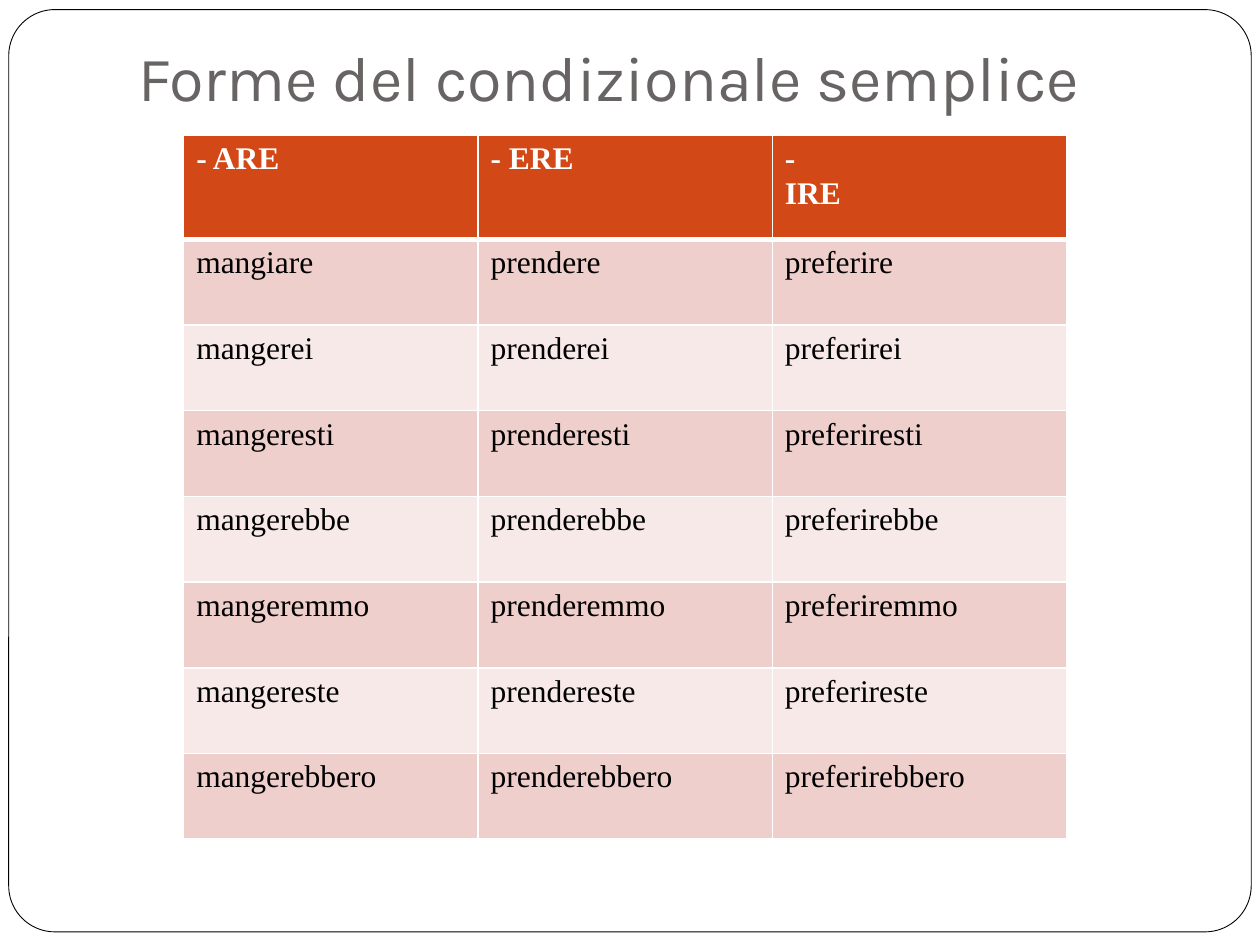
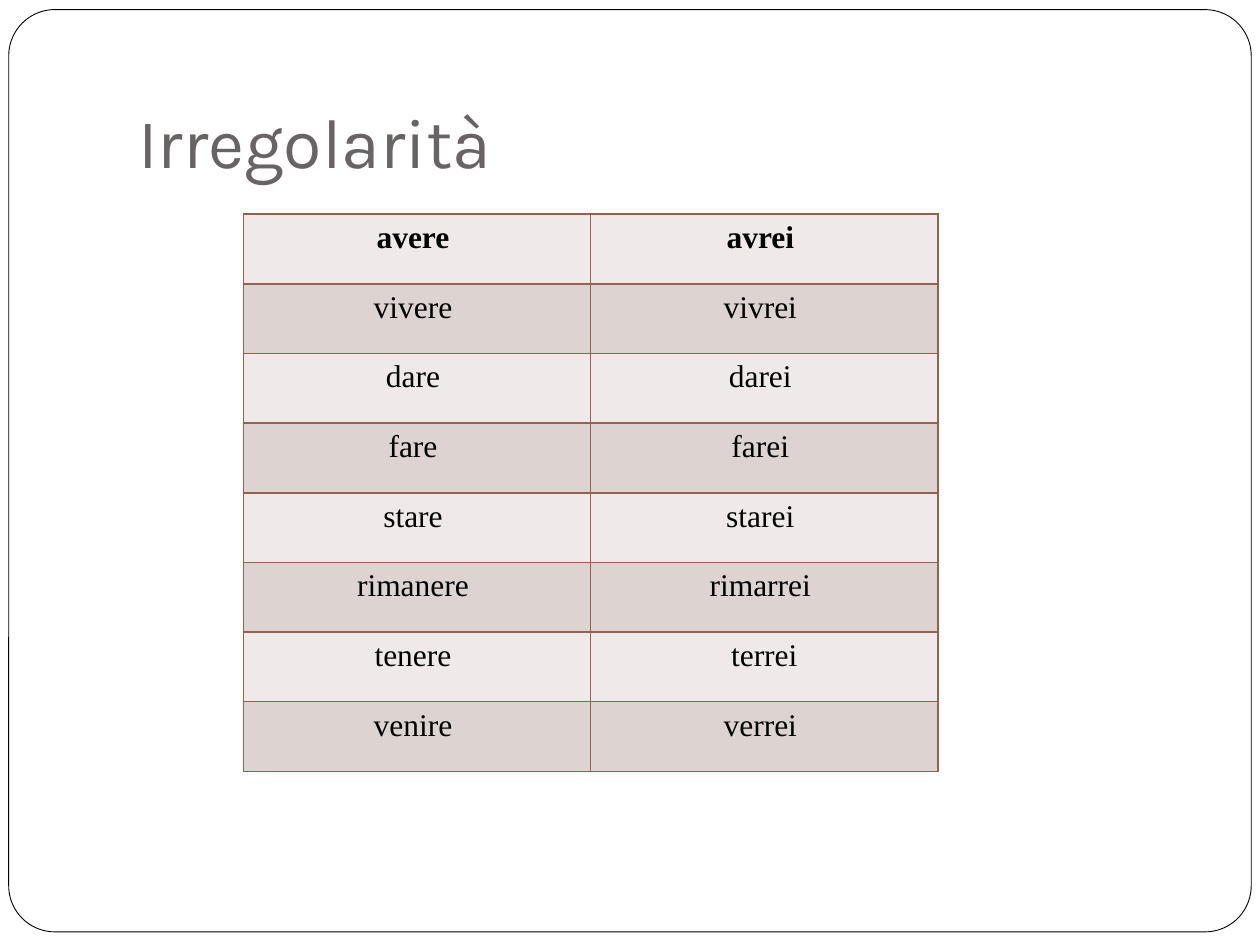
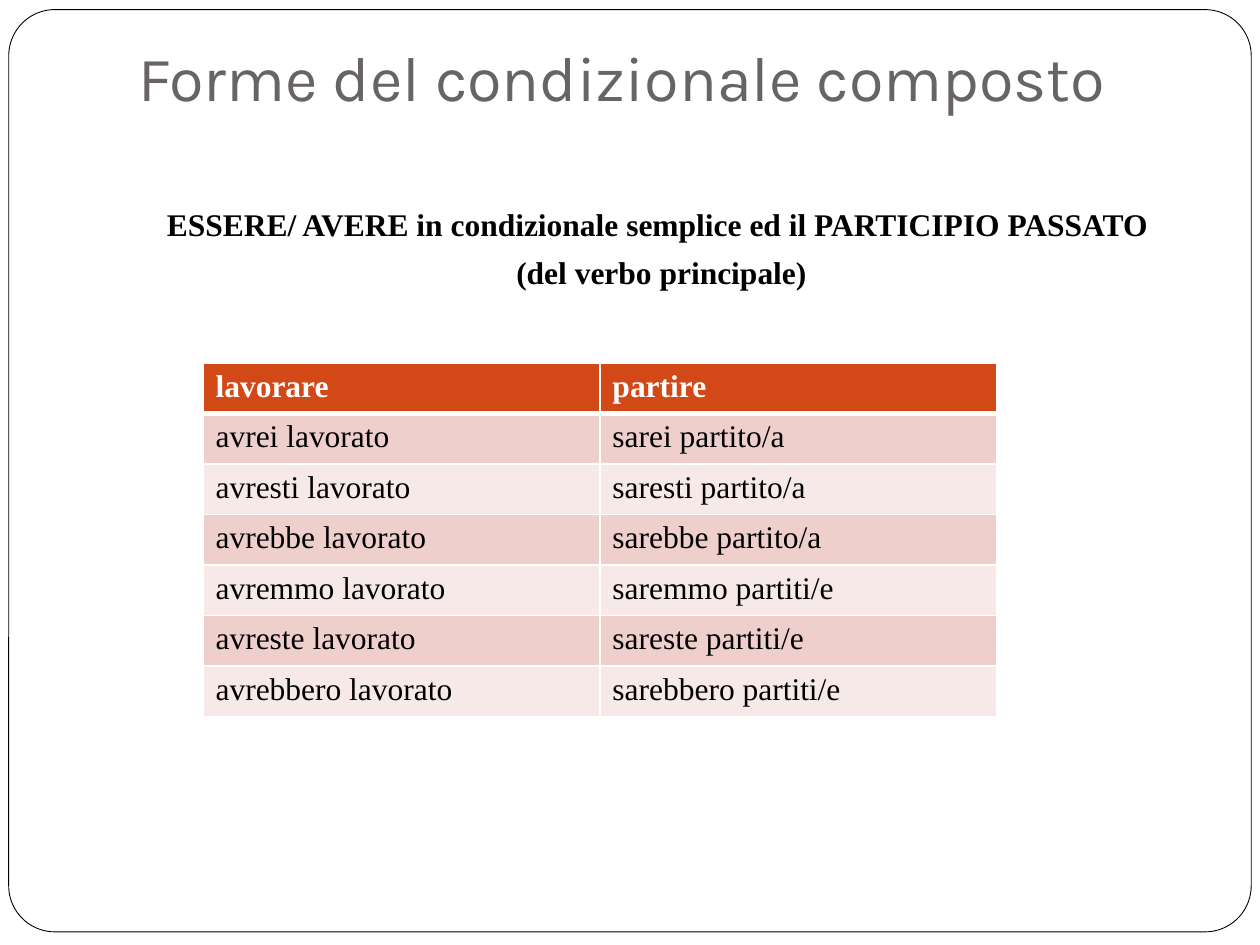
from pptx import Presentation
from pptx.dml.color import RGBColor
from pptx.enum.shapes import MSO_SHAPE
from pptx.enum.text import MSO_ANCHOR, PP_ALIGN
from pptx.oxml import parse_xml
from pptx.oxml.ns import nsdecls
from pptx.util import Pt

WHITE = RGBColor(0xFF, 0xFF, 0xFF)
BLACK = RGBColor(0x00, 0x00, 0x00)
GRAY = RGBColor(0x69, 0x64, 0x64)
RUST = RGBColor(0xD3, 0x48, 0x17)
ROSE = RGBColor(0xEF, 0xCF, 0xCC)
BLUSH = RGBColor(0xF7, 0xE9, 0xE8)
BROWN = RGBColor(0x95, 0x62, 0x51)
TAUPE = RGBColor(0xDD, 0xD3, 0xD0)
SAND = RGBColor(0xEF, 0xEA, 0xE9)

SIMPLE = [
    ("- ARE", "- ERE", "-\nIRE"),
    ("mangiare", "prendere", "preferire"),
    ("mangerei", "prenderei", "preferirei"),
    ("mangeresti", "prenderesti", "preferiresti"),
    ("mangerebbe", "prenderebbe", "preferirebbe"),
    ("mangeremmo", "prenderemmo", "preferiremmo"),
    ("mangereste", "prendereste", "preferireste"),
    ("mangerebbero", "prenderebbero", "preferirebbero"),
]
ODD = [
    ("avere ", "avrei "),
    ("vivere ", "vivrei "),
    ("dare ", "darei "),
    ("fare ", "farei "),
    ("stare ", "starei "),
    ("rimanere ", "rimarrei "),
    ("tenere ", "terrei"),
    ("venire ", "verrei "),
]
COMPOUND = [
    ("lavorare", "partire"),
    ("avrei lavorato", "sarei partito/a"),
    ("avresti lavorato", "saresti partito/a"),
    ("avrebbe lavorato", "sarebbe partito/a"),
    ("avremmo lavorato", "saremmo partiti/e"),
    ("avreste lavorato", "sareste partiti/e"),
    ("avrebbero lavorato", "sarebbero partiti/e"),
]


class Deck:
    def __init__(self):
        self.deck = Presentation()
        self.deck.slide_width, self.deck.slide_height = Pt(720), Pt(540)
        self.slide = None

    def page(self):
        self.slide = self.deck.slides.add_slide(self.deck.slide_layouts[6])
        frame = self.slide.shapes.add_shape(
            MSO_SHAPE.ROUNDED_RECTANGLE, Pt(5), Pt(5.5), Pt(710), Pt(527))
        frame.adjustments[0] = 0.05
        frame.shadow.inherit = False
        frame.fill.solid()
        frame.fill.fore_color.rgb = WHITE
        frame.line.color.rgb = BLACK
        frame.line.width = Pt(0.5)

    def style(self, para, size, face, color, bold=False, align=None):
        para.font.size = Pt(size)
        para.font.name = face
        para.font.color.rgb = color
        para.font.bold = bold
        para.alignment = align

    def box(self, top, height):
        frame = self.slide.shapes.add_textbox(
            Pt(72), Pt(top), Pt(612), Pt(height)).text_frame
        frame.word_wrap = True
        return frame

    def title(self, text, size=36, lift=42):
        frame = self.box(21.6, 90)
        frame.vertical_anchor = MSO_ANCHOR.BOTTOM
        frame.margin_top = 0
        frame.margin_bottom = Pt(7.2 + lift)
        frame.text = text
        self.style(frame.paragraphs[0], size, "Karla", GRAY)

    def body(self, text):
        frame = self.box(113.8, 360)
        frame.text = text
        for para in frame.paragraphs:
            self.style(para, 18, "Times New Roman", BLACK, True, PP_ALIGN.CENTER)
            para.space_before = Pt(5.8)

    def edge(self, cell, side, color, width):
        cell._tc.get_or_add_tcPr().append(parse_xml(
            f'<a:ln{side} {nsdecls("a")} w="{Pt(width)}"><a:solidFill>'
            f'<a:srgbClr val="{color}"/></a:solidFill></a:ln{side}>'))

    def table(self, rows, left, top, width, height, bands, line,
              head=None, first=None, align=None):
        first = first or height
        cols = len(rows[0])
        total = first + height * (len(rows) - 1)
        grid = self.slide.shapes.add_table(
            len(rows), cols, Pt(left), Pt(top), Pt(width), Pt(total)).table
        for col in grid.columns:
            col.width = Pt(width / cols)
        for r, row in enumerate(rows):
            top_row = r == 0
            grid.rows[r].height = Pt(first if top_row else height)
            wide = {"B": 3} if top_row else {"T": 3} if r == 1 else {}
            for c, text in enumerate(row):
                cell = grid.cell(r, c)
                for side in "LRTB":
                    self.edge(cell, side, line, wide.get(side, 1) if head else 1)
                cell.fill.solid()
                cell.fill.fore_color.rgb = head if head and top_row else bands[r % 2]
                cell.text = text
                ink = WHITE if head and top_row else BLACK
                for para in cell.text_frame.paragraphs:
                    self.style(para, 18, "Times New Roman", ink, top_row, align)


def main():
    deck = Deck()

    deck.page()
    deck.title("Forme del condizionale semplice")
    deck.table(SIMPLE, 105, 77.2, 504.6, 49, (BLUSH, ROSE), WHITE, RUST, first=59.5)

    deck.page()
    deck.title("Irregolarità", 40, 0)
    deck.table(ODD, 139, 122.4, 397, 39.8, (SAND, TAUPE), BROWN,
               align=PP_ALIGN.CENTER)

    deck.page()
    deck.title("Forme del condizionale composto")
    deck.body("ESSERE/ AVERE in condizionale semplice ed il PARTICIPIO PASSATO \n"
              "(del verbo principale)")
    deck.table(COMPOUND, 116, 207.5, 453.6, 28.3, (BLUSH, ROSE), WHITE, RUST)

    deck.deck.save("out.pptx")


if __name__ == "__main__":
    main()
